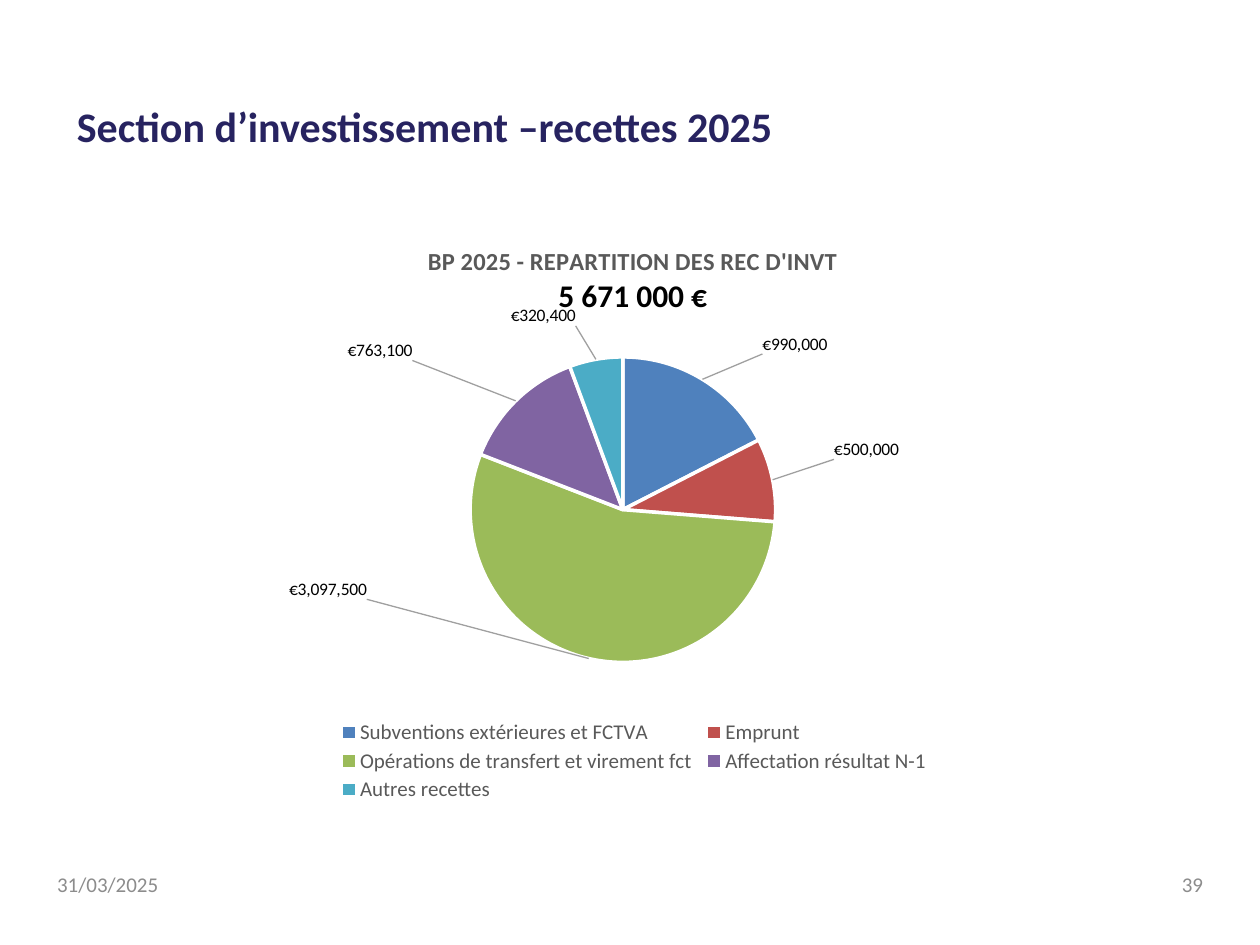
import pptx
import pptx.chart.data
import pptx.dml.color
import pptx.enum.chart
import pptx.enum.text
import pptx.oxml
import pptx.oxml.ns
import pptx.util

Pt = pptx.util.Pt
ALIGN = pptx.enum.text.PP_ALIGN
COLORS = {
    "title": "272360", "footer": "8C8C8C", "heading": "595959",
    "total": "000000", "label": "404040", "leader": "A0A0A0", "border": "FFFFFF",
}
RECEIPTS = [
    ("Subventions extérieures et FCTVA", 990000, "4F81BD", (0.056, -0.032)),
    ("Emprunt", 500000, "C0504D", (0.054, -0.032)),
    ("Opérations de transfert et virement fct", 3097500, "9BBB59", (-0.22, -0.145)),
    ("Affectation résultat N-1", 763100, "8064A2", (-0.098, -0.059)),
    ("Autres recettes", 320400, "4BACC6", (-0.019, -0.044)),
]


def rgb(value):
    return pptx.dml.color.RGBColor.from_string(value)


def format_font(font, color, **values):
    for name, value in {"name": "Calibri", **values}.items():
        setattr(font, name, value)
    font.color.rgb = rgb(COLORS[color])


def write_line(paragraph, text, color, alignment=ALIGN.LEFT, **values):
    paragraph.alignment = alignment
    run = paragraph.add_run()
    run.text = text
    format_font(run.font, color, **values)


def add_title(slide, text):
    title = slide.shapes.title
    bounds = {"left": Pt(36.7), "top": Pt(54.7), "width": Pt(589.7), "height": Pt(33.8)}
    for name, value in bounds.items():
        setattr(title, name, value)
    frame = title.text_frame
    frame.word_wrap = True
    frame.vertical_anchor = pptx.enum.text.MSO_ANCHOR.MIDDLE
    write_line(frame.paragraphs[0], text, "title", size=Pt(24), bold=True)


def add_footer(slide, text, left, alignment):
    frame = slide.shapes.add_textbox(Pt(left), Pt(491), Pt(168), Pt(28.8)).text_frame
    frame.word_wrap = True
    frame.vertical_anchor = pptx.enum.text.MSO_ANCHOR.MIDDLE
    write_line(frame.paragraphs[0], text, "footer", alignment, size=Pt(12))


def make_layout(values):
    items = "".join(f'<c:{name} val="{value}"/>' for name, value in values.items())
    namespace = pptx.oxml.ns.nsdecls("c")
    return pptx.oxml.parse_xml(
        f"<c:layout {namespace}><c:manualLayout>{items}</c:manualLayout></c:layout>")


def place(element, values, predecessor=None):
    for layout in element.findall(pptx.oxml.ns.qn("c:layout")):
        element.remove(layout)
    layout = make_layout(values)
    if predecessor is None:
        element.insert(0, layout)
    else:
        element.find(pptx.oxml.ns.qn(predecessor)).addnext(layout)


def edge_layout(left, top, width=None, height=None):
    values = {"xMode": "edge", "yMode": "edge", "x": left, "y": top}
    if width:
        values.update(w=width, h=height)
    return values


def add_chart_title(chart):
    frame = chart.chart_title.text_frame
    write_line(frame.paragraphs[0], "BP 2025 - REPARTITION DES REC D'INVT", "heading",
               ALIGN.CENTER, size=Pt(14), bold=True)
    write_line(frame.add_paragraph(), "5 671 000 €", "total",
               ALIGN.CENTER, size=Pt(18), bold=True)
    chart.chart_title.include_in_layout = False
    title = chart.chart_title._element
    place(title, edge_layout(0.29, 0.045), "c:tx")


def add_legend(chart):
    chart.has_legend = True
    legend = chart.legend
    legend.position = pptx.enum.chart.XL_LEGEND_POSITION.BOTTOM
    legend.include_in_layout = False
    format_font(legend.font, "heading", size=Pt(12))
    place(legend._element, edge_layout(0.2, 0.845, 0.6, 0.15), "c:legendPos")


def format_slices(series):
    for index, (_, _, color, _) in enumerate(RECEIPTS):
        slice_format = series.points[index].format
        slice_format.fill.solid()
        slice_format.fill.fore_color.rgb = rgb(color)
        slice_format.line.width = Pt(2)
        slice_format.line.color.rgb = rgb(COLORS["border"])


def add_labels(series):
    labels = series.data_labels
    settings = {
        "show_value": True, "number_format": '"€"#,##0', "number_format_is_linked": False,
        "position": pptx.enum.chart.XL_LABEL_POSITION.OUTSIDE_END,
    }
    for name, value in settings.items():
        setattr(labels, name, value)
    format_font(labels.font, "label", size=Pt(9))
    element = labels._element
    for index, (_, _, _, (shift_x, shift_y)) in enumerate(RECEIPTS):
        label = series.points[index].data_label
        label.position = settings["position"]
        label_element = element.xpath(f"c:dLbl[c:idx/@val='{index}']")[0]
        place(label_element, {"x": shift_x, "y": shift_y}, "c:idx")
    for old in element.xpath("c:showLeaderLines | c:leaderLines"):
        element.remove(old)
    namespace = pptx.oxml.ns.nsdecls("c", "a")
    for xml in (
        f'<c:showLeaderLines {namespace} val="1"/>',
        f'<c:leaderLines {namespace}><c:spPr><a:ln w="9525"><a:solidFill>'
        f'<a:srgbClr val="{COLORS["leader"]}"/></a:solidFill></a:ln></c:spPr></c:leaderLines>',
    ):
        element.append(pptx.oxml.parse_xml(xml))


def add_receipts_chart(slide):
    data = pptx.chart.data.CategoryChartData()
    data.categories = [receipt[0] for receipt in RECEIPTS]
    data.add_series("Series 1", [receipt[1] for receipt in RECEIPTS])
    chart = slide.shapes.add_chart(
        pptx.enum.chart.XL_CHART_TYPE.PIE,
        Pt(76.3), Pt(122.4), Pt(572.4), Pt(339.8), data).chart
    format_font(chart.font, "total", size=Pt(10))
    add_chart_title(chart)
    add_legend(chart)
    series = chart.plots[0].series[0]
    format_slices(series)
    add_labels(series)
    plot_area = chart._chartSpace.chart.plotArea
    place(plot_area, {"layoutTarget": "inner", **edge_layout(0.336, 0.24, 0.305, 0.514)})


def main():
    presentation = pptx.Presentation()
    presentation.slide_width, presentation.slide_height = Pt(720), Pt(540)
    slide = presentation.slides.add_slide(presentation.slide_layouts[5])
    add_title(slide, "Section d’investissement –recettes 2025")
    add_receipts_chart(slide)
    add_footer(slide, "31/03/2025", 25.5, ALIGN.LEFT)
    add_footer(slide, "39", 526.5, ALIGN.RIGHT)
    presentation.save("out.pptx")


if __name__ == "__main__":
    main()
